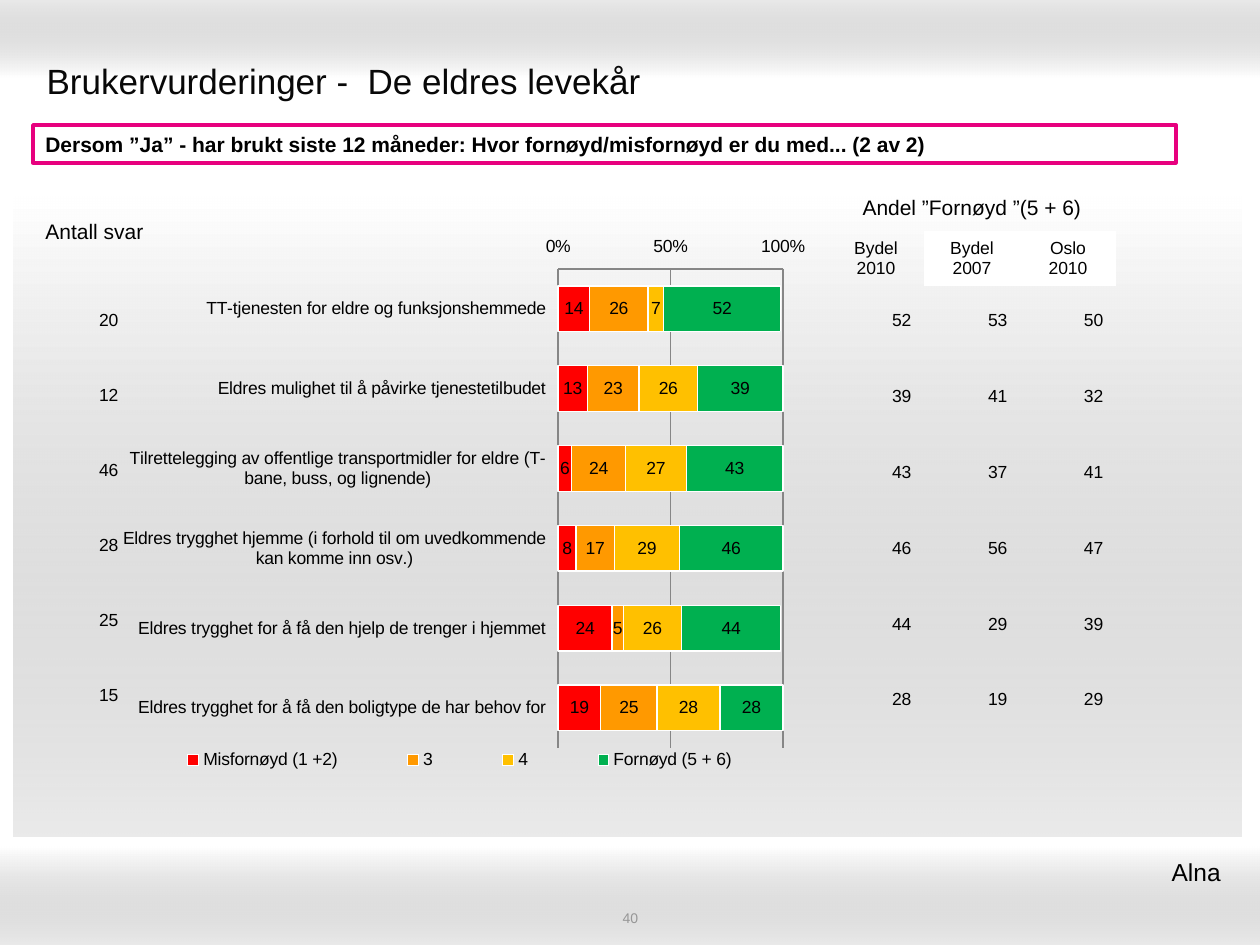
from dataclasses import dataclass
from typing import NamedTuple

from lxml import etree
from pptx import Presentation
from pptx import util as u
from pptx.chart.data import CategoryChartData
from pptx.dml.color import RGBColor
from pptx.enum import chart as ch, shapes, text
from pptx.oxml import ns

PX = 914400 / 126  # EMU in one px
PLAIN_TABLE = "{2D5ABB26-0587-4C30-8999-92F81FD0307C}"  # no style, no grid
LEFT, CENTER, RIGHT = text.PP_ALIGN.LEFT, text.PP_ALIGN.CENTER, text.PP_ALIGN.RIGHT


@dataclass(frozen=True)
class Theme:
    font: str = "Arial"
    black: str = "000000"
    title: str = "080808"
    white: str = "FFFFFF"
    band: str = "999999"
    number: str = "969696"
    accent: str = "E7007E"
    grid: str = "868686"
    title_pt: int = 20
    place_pt: int = 14
    head_pt: int = 12
    body_pt: int = 10
    number_pt: int = 8


class Box(NamedTuple):
    x: int
    y: int
    w: int
    h: int


class Band(NamedTuple):
    box: Box
    angle: int


class Series(NamedTuple):
    name: str
    color: str
    values: list[int]


class Grid(NamedTuple):
    box: Box
    row_heights: list[int]
    rows: list[list[str]]
    pt: int
    align: text.PP_ALIGN


T = Theme()

BANDS = [
    Band(Box(0, 0, 1260, 78), 90),
    Band(Box(0, 847, 1260, 98), 270),
    Band(Box(14, 197, 1227, 640), 270),
]
CHART, PLOT, LEGEND = Box(123, 226, 694, 572), Box(558, 269, 225, 479), Box(123, 746, 673, 28)
CATEGORIES = [
    "TT-tjenesten for eldre og funksjonshemmede",
    "Eldres mulighet til å påvirke tjenestetilbudet",
    "Tilrettelegging av offentlige transportmidler for eldre (T-bane, buss, og lignende)",
    "Eldres trygghet hjemme (i forhold til om uvedkommende kan komme inn osv.)",
    "Eldres trygghet for å få den hjelp de trenger i hjemmet",
    "Eldres trygghet for å få den boligtype de har behov for",
]
SERIES = [
    Series("Misfornøyd (1 +2)", "FF0000", [14, 13, 6, 8, 24, 19]),
    Series("3", "FF9900", [26, 23, 24, 17, 5, 25]),
    Series("4", "FFC000", [7, 26, 27, 29, 26, 28]),
    Series("Fornøyd (5 + 6)", "00B050", [52, 39, 43, 46, 44, 28]),
]
SHARES = Grid(Box(828, 282, 288, 456), [76] * 6,
              [["52", "53", "50"], ["39", "41", "32"], ["43", "37", "41"],
               ["46", "56", "47"], ["44", "29", "39"], ["28", "19", "29"]], T.body_pt, RIGHT)
HEADS = Grid(Box(828, 185, 288, 95), [46, 49],
             [["", "", ""], ["Bydel\n2010", "Bydel\n2007", "Oslo\n2010"]], T.body_pt, CENTER)
COUNTS = Grid(Box(65, 283, 66, 450), [75] * 6,
              [[n] for n in ("20", "12", "46", "28", "25", "15")], T.body_pt, RIGHT)
COUNT_HEAD = Grid(Box(5, 195, 179, 74), [74], [["Antall svar"]], T.head_pt, CENTER)


def rgb(color: str) -> RGBColor:
    return RGBColor.from_string(color)


def emu(*lengths: int) -> list[u.Emu]:
    return [u.Emu(round(n * PX)) for n in lengths]


def assign(target, **values) -> None:
    for name, value in values.items():
        setattr(target, name, value)


def style(font, pt: int, color: str = T.black, bold: bool = False) -> None:
    assign(font, name=T.font, size=u.Pt(pt), bold=bold)
    font.color.rgb = rgb(color)


def write(tf, words: str, pt: int, align=LEFT, color: str = T.black, bold: bool = False) -> None:
    for i, line in enumerate(words.split("\n")):
        p = tf.paragraphs[0] if i == 0 else tf.add_paragraph()
        p.alignment = align
        r = p.add_run()
        r.text = line
        style(r.font, pt, color, bold)


def add_band(s, band: Band) -> None:
    sp = s.shapes.add_shape(shapes.MSO_SHAPE.RECTANGLE, *emu(*band.box))
    sp.shadow.inherit = False
    sp.line.fill.background()
    sp.fill.gradient()
    sp.fill.gradient_angle = band.angle
    for stop, color, position in zip(sp.fill.gradient_stops, (T.white, T.band), (0, 1)):
        stop.color.rgb = rgb(color)
        stop.position = position
    last = sp.element.findall(".//" + ns.qn("a:srgbClr"))[-1]
    etree.SubElement(last, ns.qn("a:alpha"), val="20000")


def add_text(s, box: Box, words: str, pt: int, align, color: str, anchor) -> None:
    tf = s.shapes.add_textbox(*emu(*box)).text_frame
    assign(tf, word_wrap=True, vertical_anchor=anchor)
    write(tf, words, pt, align, color)


def add_grid(s, grid: Grid):
    frame = s.shapes.add_table(len(grid.rows), len(grid.rows[0]), *emu(*grid.box))
    frame.element.find(".//" + ns.qn("a:tableStyleId")).text = PLAIN_TABLE
    table = frame.table
    assign(table, first_row=False, horz_banding=False)
    for row, height, words in zip(table.rows, grid.row_heights, grid.rows):
        row.height = emu(height)[0]
        for cell, word in zip(row.cells, words):
            cell.fill.background()
            cell.vertical_anchor = text.MSO_ANCHOR.MIDDLE
            if word:
                write(cell.text_frame, word, grid.pt, grid.align)
    return table


def place(element, before: str, box: Box, **target: str) -> None:
    """Give a chart part a manual layout, as fractions of the chart."""
    for old in element.findall(ns.qn("c:layout")):
        element.remove(old)
    layout = etree.Element(ns.qn("c:layout"))
    manual = etree.SubElement(layout, ns.qn("c:manualLayout"))
    values = target | {
        "xMode": "edge", "yMode": "edge",
        "x": (box.x - CHART.x) / CHART.w, "y": (box.y - CHART.y) / CHART.h,
        "w": box.w / CHART.w, "h": box.h / CHART.h,
    }
    for name, value in values.items():
        etree.SubElement(manual, ns.qn("c:" + name), val=str(value))
    element.find(ns.qn(before)).addprevious(layout)


def add_bars(s) -> None:
    data = CategoryChartData()
    data.categories = CATEGORIES
    for series in SERIES:
        data.add_series(series.name, series.values)
    chart = s.shapes.add_chart(ch.XL_CHART_TYPE.BAR_STACKED, *emu(*CHART), data).chart
    style(chart.font, T.body_pt)
    assign(chart, has_title=False, has_legend=True)
    assign(chart.legend, position=ch.XL_LEGEND_POSITION.BOTTOM, include_in_layout=False)

    # Bars and their labels
    plot = chart.plots[0]
    assign(plot, gap_width=75, overlap=100, vary_by_categories=False)
    for bar, series in zip(plot.series, SERIES):
        bar.format.fill.solid()
        bar.format.fill.fore_color.rgb = rgb(series.color)
        bar.format.line.color.rgb = rgb(T.white)
        bar.format.line.width = u.Pt(0.75)
        assign(bar.data_labels, show_value=True, number_format="0", number_format_is_linked=False)

    # Axes; level category labels may break into lines
    low, none = ch.XL_TICK_LABEL_POSITION.LOW, ch.XL_TICK_MARK.NONE
    cat, val = chart.category_axis, chart.value_axis
    assign(cat, reverse_order=True, tick_label_position=low, major_tick_mark=none)
    assign(val, minimum_scale=0, maximum_scale=100, major_unit=50, has_major_gridlines=True,
           tick_label_position=low, major_tick_mark=ch.XL_TICK_MARK.INSIDE)
    assign(val.tick_labels, number_format="General\\%", number_format_is_linked=False)
    style(cat.tick_labels.font, T.body_pt)
    body = chart.element.find(".//" + ns.qn("c:catAx")).find(".//" + ns.qn("a:bodyPr"))
    body.set("rot", "0")
    body.set("vert", "horz")
    for line in (cat.format.line, val.format.line, val.major_gridlines.format.line):
        line.color.rgb = rgb(T.grid)
        line.width = u.Pt(0.75)

    area = chart.element.find(".//" + ns.qn("c:plotArea"))
    place(area, "c:barChart", PLOT, layoutTarget="inner")
    place(chart.element.find(".//" + ns.qn("c:legend")), "c:overlay", LEGEND)


def main() -> None:
    prs = Presentation()
    prs.slide_width, prs.slide_height = emu(1260, 945)
    s = prs.slides.add_slide(prs.slide_layouts[5])
    middle, top = text.MSO_ANCHOR.MIDDLE, text.MSO_ANCHOR.TOP

    # Background bands, with the title in front of them
    for band in BANDS:
        add_band(s, band)
    title = s.shapes.title
    title.element.getparent().append(title.element)
    assign(title, **dict(zip(("left", "top", "width", "height"), emu(34, 46, 1191, 69))))
    assign(title.text_frame, vertical_anchor=middle, auto_size=text.MSO_AUTO_SIZE.NONE)
    write(title.text_frame, "Brukervurderinger -  De eldres levekår", T.title_pt, color=T.title)

    # Page number
    add_text(s, Box(431, 909, 399, 18), "40", T.number_pt, CENTER, T.number, middle)

    # Question box
    sp = s.shapes.add_shape(shapes.MSO_SHAPE.RECTANGLE, *emu(33, 125, 1143, 38))
    sp.shadow.inherit = False
    sp.fill.solid()
    sp.fill.fore_color.rgb = rgb(T.white)
    sp.line.color.rgb = rgb(T.accent)
    sp.line.width = u.Pt(2)
    assign(sp.text_frame, word_wrap=True, vertical_anchor=top)
    write(sp.text_frame, "Dersom ”Ja” - har brukt siste 12 måneder: "
          "Hvor fornøyd/misfornøyd er du med... (2 av 2)", T.head_pt, bold=True)

    # Chart and the tables around it
    add_bars(s)
    add_grid(s, SHARES)
    heads = add_grid(s, HEADS)
    heads.cell(0, 0).merge(heads.cell(0, 2))
    write(heads.cell(0, 0).text_frame, "Andel ”Fornøyd ”(5 + 6)", T.head_pt, CENTER)
    for column in (1, 2):
        fill = heads.cell(1, column).fill
        fill.solid()
        fill.fore_color.rgb = rgb(T.white)
    add_grid(s, COUNTS)
    add_grid(s, COUNT_HEAD)

    # District
    add_text(s, Box(769, 851, 471, 43), "Alna ", T.place_pt, RIGHT, T.black, top)
    prs.save("out.pptx")


if __name__ == "__main__":
    main()
